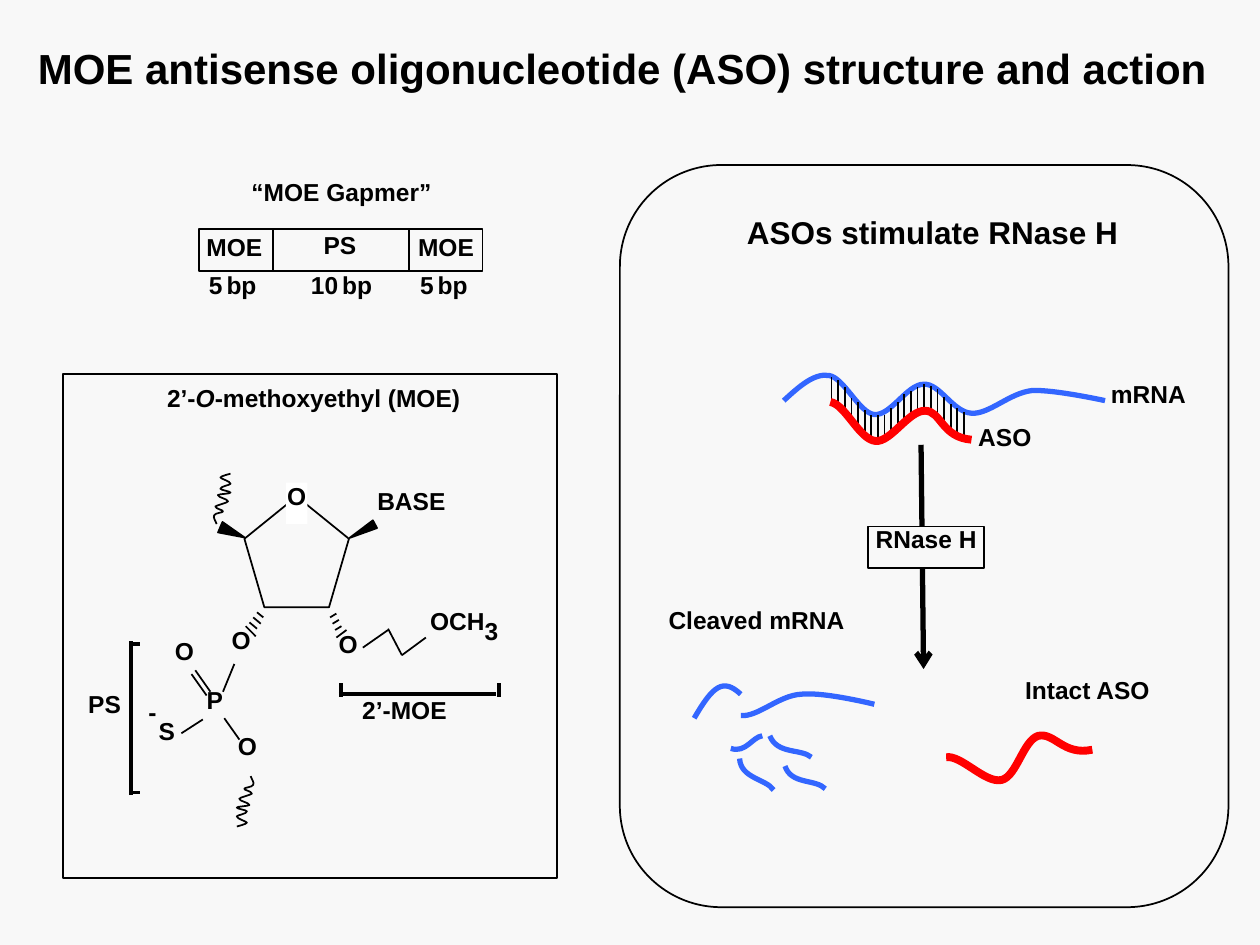
from lxml import etree
from pptx import Presentation
from pptx.dml.color import RGBColor
from pptx.enum.shapes import MSO_CONNECTOR, MSO_SHAPE
from pptx.enum.text import MSO_ANCHOR, PP_ALIGN
from pptx.oxml.ns import qn
from pptx.util import Inches, Pt

LINE = MSO_CONNECTOR.STRAIGHT
RECT, ROUND = MSO_SHAPE.RECTANGLE, MSO_SHAPE.ROUNDED_RECTANGLE
RING, WEDGE = MSO_SHAPE.REGULAR_PENTAGON, MSO_SHAPE.ISOSCELES_TRIANGLE
LEFT, CENTER, MIDDLE = PP_ALIGN.LEFT, PP_ALIGN.CENTER, MSO_ANCHOR.MIDDLE
COLORS = {"ink": "000000", "paper": "F8F8F8", "white": "FFFFFF",
          "mrna": "3366FF", "aso": "FF0000"}
WIDTH, HEIGHT = Inches(10), Inches(7.5)
COLS, ROWS = 1000, 750


def rgb(name):
    return RGBColor.from_string(COLORS[name])


def place(box, x, y):
    return round((box[0] + x) * WIDTH / COLS), round((box[1] + y) * HEIGHT / ROWS)


def span(w, h):
    return place((0, 0), w, h)


def set_line(line, color, width):
    line.color.rgb = rgb(color)
    line.width = Pt(width)


def add_label(s, box, text, x, y, w, h=34, size=14, align=CENTER, wrap=True):
    sp = s.shapes.add_textbox(*place(box, x, y), *span(w, h))
    tf = sp.text_frame
    tf.word_wrap = wrap
    p = tf.paragraphs[0]
    p.alignment = align
    for part in [text] if isinstance(text, str) else text:
        r = p.add_run()
        r.text = part
        r.font.name, r.font.size, r.font.bold = "Arial", Pt(size), True
        r.font.color.rgb = rgb("ink")
    return tf


def add_box(s, box, kind, x, y, w, h, fill=None, outline=True, rotation=0):
    sp = s.shapes.add_shape(kind, *place(box, x, y), *span(w, h))
    sp.shadow.inherit = False
    sp.rotation = rotation
    if fill:
        sp.fill.solid()
        sp.fill.fore_color.rgb = rgb(fill)
    else:
        sp.fill.background()
    if outline:
        set_line(sp.line, "ink", 1)
    else:
        sp.line.fill.background()


def add_stroke(s, box, x1, y1, x2, y2, width=1):
    sp = s.shapes.add_connector(LINE, *place(box, x1, y1), *place(box, x2, y2))
    set_line(sp.line, "ink", width)
    etree.SubElement(sp._element.spPr, qn("a:effectLst"))
    return sp


def add_curve(s, box, start, segments, color, width):
    builder = s.shapes.build_freeform(*place(box, *start))
    builder.add_line_segments([place(box, *seg[4:]) for seg in segments], close=False)
    sp = builder.convert_to_shape()
    outline = next(sp._element.iter(qn("a:moveTo"))).getparent()
    for straight, seg in zip(outline.findall(qn("a:lnTo")), segments):
        cubic = etree.Element(qn("a:cubicBezTo"))
        for i in (0, 2, 4):
            x, y = place(box, *seg[i:i + 2])
            etree.SubElement(cubic, qn("a:pt"), x=str(x - sp.left), y=str(y - sp.top))
        outline.replace(straight, cubic)
    sp.shadow.inherit = False
    sp.fill.background()
    set_line(sp.line, color, width)


def add_title(s, box):
    tf = add_label(s, box, "MOE antisense oligonucleotide (ASO) structure and action",
                   0, 0, box[2], box[3], size=24)
    tf.vertical_anchor = MIDDLE


def add_gapmer(s, box):
    for x, w in [(0, 58.5), (58.5, 108), (166.5, 58.5)]:
        add_box(s, box, RECT, x, 46, w, 33)
    for name, x, y in [("MOE", -4, 43), ("MOE", 164, 43), ("PS", 89, 42)]:
        add_label(s, box, name, x, y, 67, align=LEFT)
    counts = ["5", " ", "bp\t10", " ", "bp\t5", " ", "bp"]
    tf = add_label(s, box, counts, -2, 73, 269, align=LEFT)
    p = tf.paragraphs[0]
    for r in p.runs[1::2]:
        r.font.size = Pt(8)
    tabs = etree.SubElement(p._p.get_or_add_pPr(), qn("a:tabLst"))
    for x in (81, 167.5):
        etree.SubElement(tabs, qn("a:tab"), pos=str(span(x, 0)[0]), algn="l")
    add_label(s, box, "“MOE Gapmer”", -16, 0, 258)


def add_molecule(s, box):
    add_box(s, box, RING, 144, 97, 83, 88)
    add_box(s, box, WEDGE, 234, 113, 7, 23, "ink", rotation=241.6)
    add_box(s, box, WEDGE, 130, 115, 9, 21, "ink", rotation=113)
    add_box(s, box, RECT, 177, 86, 17, 33, "white", outline=False)

    right_hash = [(217, 190, 212, 193), (219, 195, 214, 198),
                  (221, 200, 216, 203), (225, 203, 217, 209)]
    left_hash = [(159, 193, 154, 189), (157, 198, 151, 193),
                 (154, 202, 148, 197), (153, 208, 145, 200)]
    phosphate = [(94, 285, 111, 274), (127, 252, 136, 230), (117, 252, 105, 235),
                 (114, 255, 102, 238), (140, 290, 128, 273)]
    chain = [(238, 217, 258, 203), (269, 223, 258, 202), (269, 223, 288, 209)]
    for bond in right_hash + left_hash + phosphate + chain:
        add_stroke(s, box, *bond)
    brackets = [(219, 254, 344, 254), (221, 256, 221, 245), (346, 256, 346, 245),
                (54, 334, 54, 212), (53, 214, 61, 214), (53, 332, 61, 332)]
    for stroke in brackets:
        add_stroke(s, box, *stroke, width=2.25)

    for text, x, y, w in [
            ("O", 209, 197, 33), ("O", 124, 194, 33), ("P", 104, 242, 33),
            ("S", 66, 266, 33), ("O", 79, 203, 33), ("O", 129, 278, 33),
            ("O", 168, 80, 33), ("BASE", 239, 84, 75), ("OCH", 272, 179, 82),
            ("3", 299, 187, 82), ("-", 30, 251, 82), ("2’-MOE", 142, 250, 258),
            ("PS", 4, 245, 58)]:
        add_label(s, box, text, x, y, w, 33)

    start = (149, 319)
    squiggle = [(150, 322, 152, 324, 151, 326), (150, 328, 144, 328, 144, 329),
                (143, 330, 150, 331, 150, 333), (149, 334, 140, 336, 140, 337),
                (140, 339, 148, 340, 148, 342), (147, 343, 138, 343, 138, 344),
                (138, 345, 146, 346, 146, 347), (146, 349, 138, 350, 138, 351),
                (138, 353, 146, 355, 146, 356), (146, 357, 138, 359, 138, 359)]
    turn = (271, 438)
    turned = [[turn[i % 2] - v for i, v in enumerate(seg)] for seg in squiggle]
    add_curve(s, box, start, squiggle, "ink", 1)
    add_curve(s, box, (turn[0] - start[0], turn[1] - start[1]), turned, "ink", 1)


def add_structure(s, box):
    tf = add_label(s, box, ["2’-", "O", "-methoxyethyl (MOE)"], 70, 2, 258)
    tf.paragraphs[0].runs[1].font.italic = True
    add_molecule(s.shapes.add_group_shape(), box)
    add_box(s, box, RECT, 0, 0, box[2], box[3])


def add_action(s, box):
    mrna = [
        ((130, 187), [(142, 176, 154, 165, 166, 167), (178, 169, 190, 197, 202, 198),
                      (215, 199, 228, 174, 241, 174), (254, 173, 264, 196, 279, 197),
                      (293, 198, 309, 181, 327, 179), (344, 178, 385, 187, 385, 187)]),
        ((59, 439), [(74, 413, 82, 407, 96, 420)]),
        ((96, 437), [(110, 438, 126, 421, 144, 420), (162, 418, 202, 428, 202, 428)]),
        ((88, 463), [(100, 467, 105, 454, 113, 453)]),
        ((95, 471), [(96, 487, 116, 487, 122, 496)]),
        ((131, 477), [(136, 492, 155, 487, 163, 495)]),
        ((119, 453), [(125, 468, 144, 463, 152, 470)])]
    aso = [
        ((167, 188), [(179, 190, 190, 218, 203, 219), (215, 220, 229, 195, 242, 195),
                      (255, 195, 255, 216, 279, 218)]),
        ((259, 470), [(271, 468, 290, 491, 303, 488), (315, 485, 320, 457, 332, 453),
                      (345, 450, 352, 469, 375, 464)])]
    for start, segments in mrna:
        add_curve(s, box, start, segments, "mrna", 3)
    rung_tops = [168, 171, 176, 185, 188, 194, 198, 198, 198, 193, 188,
                 182, 179, 176, 174, 175, 178, 184, 190, 193, 196]
    for i, top in enumerate(rung_tops):
        x = 168 + 5.25 * i
        add_stroke(s, box, x, top + 22, x, top)
    for start, segments in aso:
        add_curve(s, box, start, segments, "aso", 4.5)

    arrow = add_stroke(s, box, 239, 222, 241, 400, width=3)
    etree.SubElement(arrow.line._get_or_add_ln(), qn("a:tailEnd"), type="arrow")
    add_label(s, box, "ASOs stimulate RNase H", 91, 33, 318, 40, 18, LEFT, wrap=False)
    add_box(s, box, RECT, 197, 287, 92, 33, "paper")
    for text, x, y, w in [
            ("mRNA", 378, 165, 83), ("ASO", 264, 199, 83), ("RNase H", 172, 280, 142),
            ("Intact ASO", 300, 400, 142), ("Cleaved mRNA", 25, 344, 167)]:
        add_label(s, box, text, x, y, w)
    add_box(s, box, ROUND, 0, 0, box[2], box[3])


def main():
    prs = Presentation()
    prs.slide_width, prs.slide_height = WIDTH, HEIGHT
    s = prs.slides.add_slide(prs.slide_layouts[6])
    s.background.fill.solid()
    s.background.fill.fore_color.rgb = rgb("paper")
    add_title(s, (0, 0, 988, 108))
    add_action(s, (492, 131, 483, 589))
    add_gapmer(s, (158, 136, 225, 107))
    add_structure(s, (50, 297, 392, 400))
    prs.save("out.pptx")


if __name__ == "__main__":
    main()
